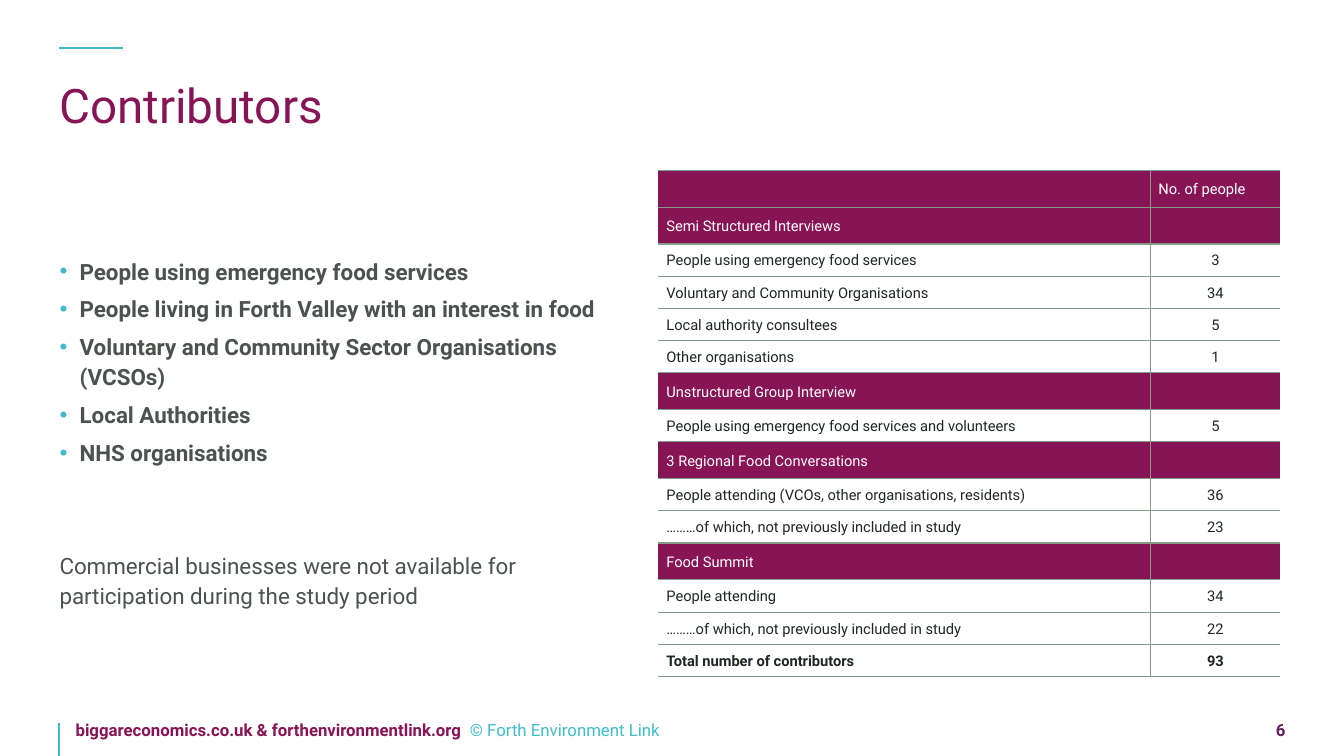
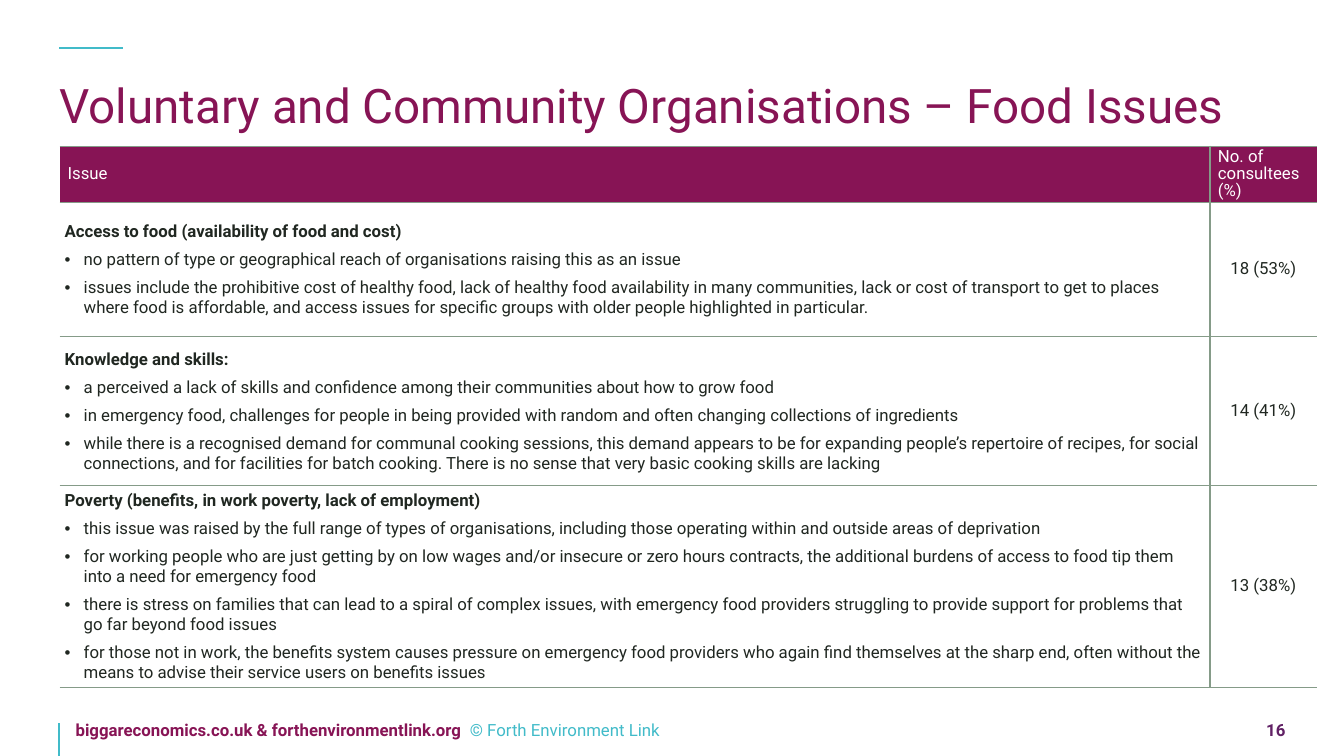
from lxml.etree import SubElement
from pptx import Presentation
from pptx.dml.color import RGBColor
from pptx.enum.shapes import MSO_CONNECTOR
from pptx.enum.text import MSO_ANCHOR, MSO_AUTO_SIZE, PP_ALIGN
from pptx.oxml.ns import qn
from pptx.util import Inches, Pt

FONT = "Roboto"
PLUM, TEAL, VIOLET = "871455", "41BBC9", "612165"
GREY, INK, SAGE, WHITE = "4C524D", "202721", "859B88", "FFFFFF"
LEFT = 0.59

GROUPS = [
    "People using emergency food services",
    "People living in Forth Valley with an interest in food",
    "Voluntary and Community Sector Organisations (VCSOs)",
    "Local Authorities",
    "NHS organisations",
]
NOTE = ("Commercial businesses were not available for participation "
        "during the study period")

COUNTS = [
    ("", "No. of people"),
    ("Semi Structured Interviews", ""),
    ("People using emergency food services", "3"),
    ("Voluntary and Community Organisations", "34"),
    ("Local authority consultees", "5"),
    ("Other organisations", "1"),
    ("Unstructured Group Interview", ""),
    ("People using emergency food services and volunteers", "5"),
    ("3 Regional Food Conversations", ""),
    ("People attending (VCOs, other organisations, residents)", "36"),
    ("………of which, not previously included in study", "23"),
    ("Food Summit", ""),
    ("People attending", "34"),
    ("………of which, not previously included in study", "22"),
    ("Total number of contributors", "93"),
]

ISSUES = [
    ("18 (53%)", "Access to food (availability of food and cost)", [
        "no pattern of type or geographical reach of organisations raising "
        "this as an issue",
        "issues include the prohibitive cost of healthy food, lack of healthy "
        "food availability in many communities, lack or cost of transport to "
        "get to places where food is affordable, and access issues for "
        "specific groups with older people highlighted in particular.",
    ]),
    ("14 (41%)", "Knowledge and skills:", [
        "a perceived a lack of skills and confidence among their communities "
        "about how to grow food",
        "in emergency food, challenges for people in being provided with "
        "random and often changing collections of ingredients",
        "while there is a recognised demand for communal cooking sessions, "
        "this demand appears to be for expanding people’s repertoire of "
        "recipes, for social connections, and for facilities for batch "
        "cooking. There is no sense that very basic cooking skills are lacking",
    ]),
    ("13 (38%)", "Poverty (benefits, in work poverty, lack of employment)", [
        "this issue was raised by the full range of types of organisations, "
        "including those operating within and outside areas of deprivation",
        "for working people who are just getting by on low wages and/or "
        "insecure or zero hours contracts, the additional burdens of access "
        "to food tip them into a need for emergency food",
        "there is stress on families that can lead to a spiral of complex "
        "issues, with emergency food providers struggling to provide support "
        "for problems that go far beyond food issues",
        "for those not in work, the benefits system causes pressure on "
        "emergency food providers who again find themselves at the sharp end, "
        "often without the means to advise their service users on benefits "
        "issues",
    ]),
]


def rgb(code):
    """Turn a hex string into a colour."""
    return RGBColor.from_string(code)


def style(run, size, color, bold=False):
    """Set the font of one run."""
    font = run.font
    font.name, font.size, font.bold = FONT, Pt(size), bold
    font.color.rgb = rgb(color)


def write(par, text, size, color, bold=False):
    """Fill a paragraph with text in one style."""
    par.text = text
    for run in par.runs:
        style(run, size, color, bold)


def bullet(par, indent, color):
    """Give a paragraph a hanging round bullet."""
    props = par._p.get_or_add_pPr()
    props.set("marL", str(Inches(indent)))
    props.set("indent", str(-Inches(indent)))
    tint = SubElement(props, qn("a:buClr"))
    SubElement(tint, qn("a:srgbClr")).set("val", color)
    SubElement(props, qn("a:buFont")).set("typeface", "Arial")
    SubElement(props, qn("a:buChar")).set("char", "•")


def setup(frame):
    """Make a text frame wrap, with no margins, from the top."""
    frame.word_wrap = True
    frame.auto_size = MSO_AUTO_SIZE.NONE
    frame.vertical_anchor = MSO_ANCHOR.TOP
    frame.margin_left = frame.margin_right = 0
    frame.margin_top = frame.margin_bottom = 0
    return frame


def box(slide, *area):
    """Add a text box and return its frame."""
    return setup(slide.shapes.add_textbox(*map(Inches, area)).text_frame)


def line(slide, *ends):
    """Draw a thin teal line."""
    rule = slide.shapes.add_connector(MSO_CONNECTOR.STRAIGHT,
                                      *map(Inches, ends))
    rule.line.color.rgb = rgb(TEAL)
    rule.line.width = Pt(1.42)
    SubElement(rule._element.spPr, qn("a:effectLst"))


def page(deck, title, number):
    """Add a slide with its title, accent lines and footer."""
    slide = deck.slides.add_slide(deck.slide_layouts[5])
    head = slide.shapes.title
    head.left, head.top = Inches(LEFT), Inches(0.82)
    head.width, head.height = Inches(12.15), Inches(1.16)
    par = setup(head.text_frame).paragraphs[0]
    write(par, title, 34, PLUM)
    par.alignment, par.line_spacing = PP_ALIGN.LEFT, 0.9
    line(slide, LEFT, 0.48, 1.22, 0.48)
    line(slide, LEFT, 7.5, LEFT, 7.17)
    foot = box(slide, 0.75, 7.14, 6.57, 0.36).paragraphs[0]
    write(foot, "biggareconomics.co.uk & forthenvironmentlink.org ", 12,
          PLUM, True)
    mark = foot.add_run()
    mark.text = " © Forth Environment Link"
    style(mark, 12, TEAL)
    count = box(slide, 12.46, 7.14, 0.29, 0.24).paragraphs[0]
    write(count, str(number), 12, VIOLET, True)
    count.alignment = PP_ALIGN.RIGHT
    return slide


def border(cell, sides):
    """Draw the named sides of a cell and clear the others."""
    props = cell._tc.get_or_add_tcPr()
    for side in "LRTB":
        edge = SubElement(props, qn("a:ln" + side))
        edge.set("w", str(Pt(1)))
        if side in sides:
            fill = SubElement(edge, qn("a:solidFill"))
            SubElement(fill, qn("a:srgbClr")).set("val", SAGE)
        else:
            SubElement(edge, qn("a:noFill"))


def grid(slide, left, top, cols, rows):
    """Add a plain two-column table with ruled rows."""
    shape = slide.shapes.add_table(len(rows), len(cols), Inches(left),
                                   Inches(top), Inches(sum(cols)),
                                   Inches(sum(rows)))
    table = shape.table
    table.first_row = table.horz_banding = False
    for col, width in zip(table.columns, cols):
        col.width = Inches(width)
    for row, height in zip(table.rows, rows):
        row.height = Inches(height)
        for cell, sides in zip(row.cells, ("RTB", "LTB")):
            border(cell, sides)
            cell.fill.background()
            cell.vertical_anchor = MSO_ANCHOR.MIDDLE
    return table


def pad(cell, left, top, right, base):
    """Set the margins of a cell."""
    cell.margin_left, cell.margin_right = Inches(left), Inches(right)
    cell.margin_top, cell.margin_bottom = Inches(top), Inches(base)


def label(cell, text, size, band=False, bold=False, center=False):
    """Write one short text in a cell, on a plum band if asked."""
    pad(cell, 0.08, 0.04, 0.08, 0.02)
    par = cell.text_frame.paragraphs[0]
    write(par, text, size, WHITE if band else INK, bold)
    par.line_spacing = Pt(12)
    if center:
        par.alignment = PP_ALIGN.CENTER
    if band:
        cell.fill.solid()
        cell.fill.fore_color.rgb = rgb(PLUM)


def detail(cell, head, points):
    """Write a bold heading and its bullets in a cell."""
    pad(cell, 0.05, 0.05, 0.05, 0.05)
    frame = cell.text_frame
    par = frame.paragraphs[0]
    write(par, head, 12, INK, True)
    par.space_after = Pt(6)
    for point in points:
        par = frame.add_paragraph()
        bullet(par, 0.19, INK)
        write(par, point, 12, INK)
        par.space_after = Pt(6)


def people(deck):
    """Build the slide on who took part."""
    slide = page(deck, "Contributors", 6)
    frame = box(slide, LEFT, 2.53, 5.42, 4.15)
    for i, text in enumerate(GROUPS + [NOTE]):
        par = frame.add_paragraph() if i else frame.paragraphs[0]
        if text != NOTE:
            bullet(par, 0.2, TEAL)
        else:
            par.space_before = Pt(54)
        write(par, text, 16, GREY, text != NOTE)
        par.line_spacing, par.space_after = 1.1, Pt(6)
    table = grid(slide, 6.53, 1.69, (4.88, 1.29), [0.32] * len(COUNTS))
    for i, (name, count) in enumerate(COUNTS):
        band = not (name and count)
        bold = i == len(COUNTS) - 1
        label(table.cell(i, 0), name, 10.5, band, bold)
        label(table.cell(i, 1), count, 10.5, band, bold, not band)


def issues(deck):
    """Build the slide on the issues raised."""
    slide = page(deck, "Voluntary and Community Organisations – Food Issues",
                 16)
    table = grid(slide, LEFT, 1.45, (11.41, 1.06), (0.56, 1.33, 1.48, 2))
    label(table.cell(0, 0), "Issue", 12, True)
    label(table.cell(0, 1), "No. of consultees (%)", 12, True)
    for i, (share, head, points) in enumerate(ISSUES, 1):
        detail(table.cell(i, 0), head, points)
        label(table.cell(i, 1), share, 12, center=True)


def main():
    """Build and save the deck."""
    deck = Presentation()
    deck.slide_width, deck.slide_height = Inches(13.33), Inches(7.5)
    people(deck)
    issues(deck)
    deck.save("out.pptx")


if __name__ == "__main__":
    main()
